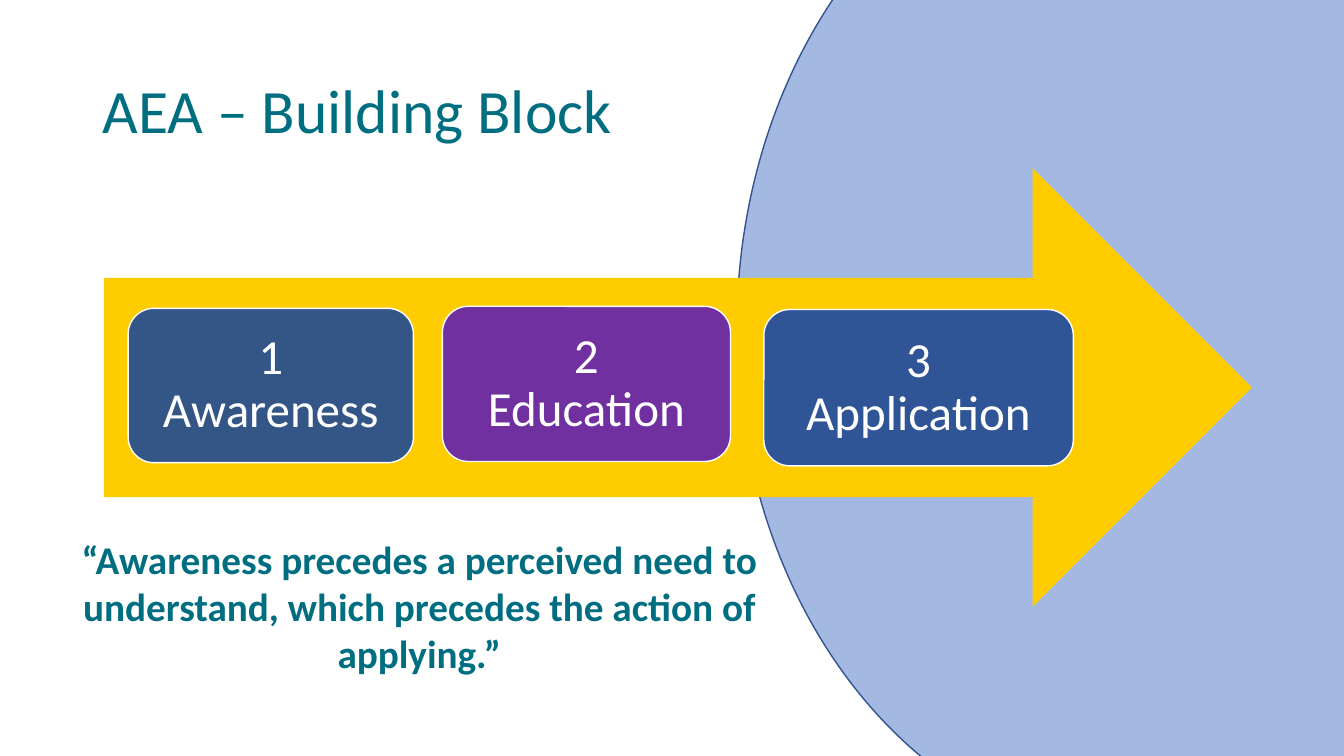
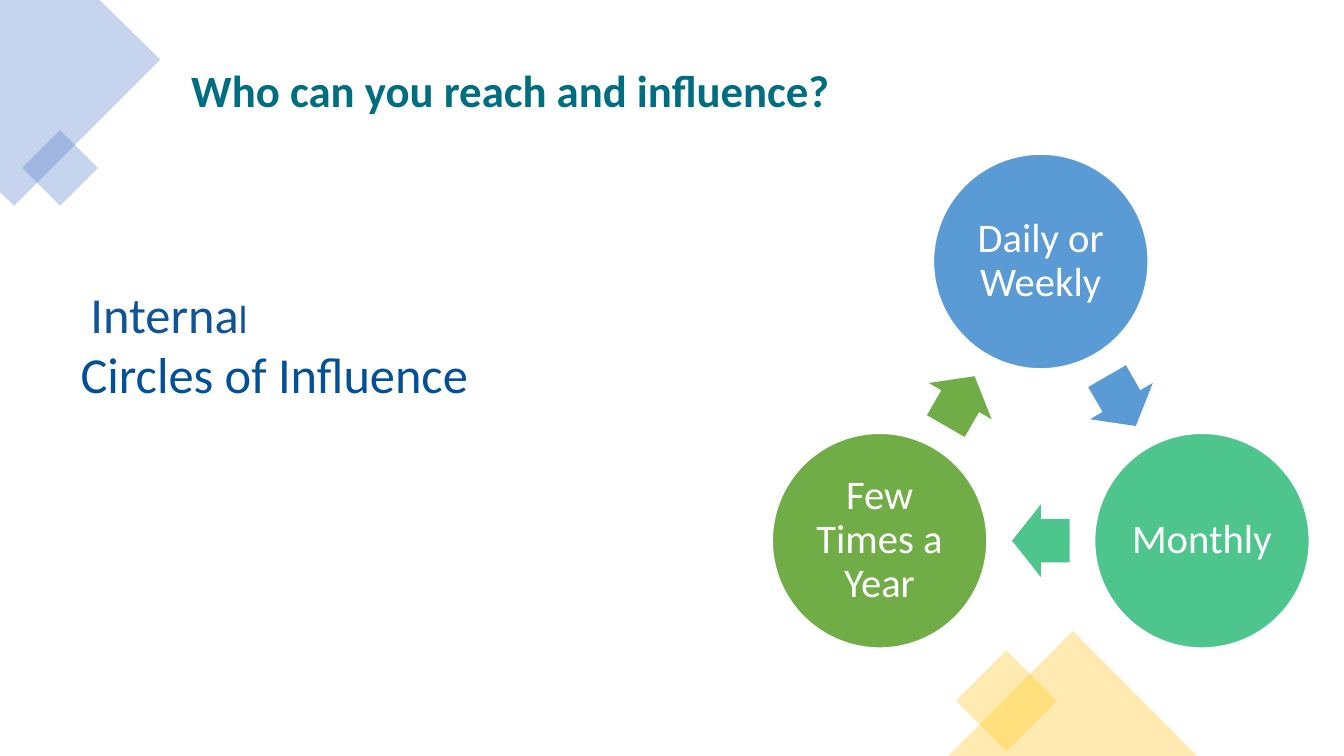
"""Build two slides on awareness building blocks and circles of influence."""
import math

import pptx
import pptx.dml.color
import pptx.enum.shapes
import pptx.enum.text
import pptx.oxml.ns
import pptx.util
from lxml import etree

Cm = pptx.util.Cm
Pt = pptx.util.Pt
SHAPES = pptx.enum.shapes.MSO_SHAPE
ALIGN = pptx.enum.text.PP_ALIGN
ANCHOR = pptx.enum.text.MSO_ANCHOR

FONT = "Calibri"
COLORS = {
    "teal": "006E81",
    "title_blue": "015098",
    "label_blue": "0F5498",
    "accent": "4472C4",
    "accent_edge": "325491",
    "yellow": "FFCC00",
    "gold": "FFC000",
    "slate": "335687",
    "purple": "7030A0",
    "navy": "2F5597",
    "sky": "5B9BD5",
    "mint": "4DC58D",
    "green": "70AD47",
    "white": "FFFFFF",
}


def rgb(name):
    return pptx.dml.color.RGBColor.from_string(COLORS[name])


def paint(shape, fill, line=None, opacity=100):
    shape.shadow.inherit = False
    shape.fill.solid()
    shape.fill.fore_color.rgb = rgb(fill)
    if opacity < 100:
        color = shape.fill._xPr.find(".//" + pptx.oxml.ns.qn("a:srgbClr"))
        alpha = etree.SubElement(color, pptx.oxml.ns.qn("a:alpha"))
        alpha.set("val", str(opacity * 1000))
    if line:
        shape.line.color.rgb = rgb(line)
        shape.line.width = Pt(1)
    else:
        shape.line.fill.background()


def add_shape(slide, kind, box, fill, line=None, opacity=100, rotation=0):
    shape = slide.shapes.add_shape(kind, *map(Cm, box))
    paint(shape, fill, line, opacity)
    shape.rotation = rotation
    return shape


def write(shape, text, size, color, bold=False, align=ALIGN.LEFT,
          anchor=ANCHOR.TOP, spacing=1.0, inset=0.25):
    frame = shape.text_frame
    frame.word_wrap = True
    frame.vertical_anchor = anchor
    frame.margin_left = frame.margin_right = Cm(inset)
    frame.margin_top = frame.margin_bottom = Cm(min(inset, 0.13))
    paragraph = frame.paragraphs[0]
    paragraph.text = text
    paragraph.alignment = align
    paragraph.line_spacing = spacing
    paragraph.font.name = FONT
    paragraph.font.size = Pt(size)
    paragraph.font.bold = bold
    paragraph.font.color.rgb = rgb(color)
    return paragraph


def add_text(slide, box, text, size, color, **style):
    return write(slide.shapes.add_textbox(*map(Cm, box)), text, size, color, **style)


def add_title(slide, box, text, size, color):
    add_text(slide, box, text, size, color, anchor=ANCHOR.MIDDLE, spacing=0.9)


def add_label_shape(slide, kind, box, fill, text, size, inset):
    shape = add_shape(slide, kind, box, fill, "white")
    write(shape, text, size, "white", align=ALIGN.CENTER,
          anchor=ANCHOR.MIDDLE, spacing=0.9, inset=inset)


def add_diamond(slide, left, top, side, fill):
    add_shape(slide, SHAPES.RECTANGLE, (left, top, side, side), fill,
              opacity=30, rotation=45)


def add_corner(slide):
    points = [(Cm(x), Cm(y)) for x, y in
              [(0, 0), (2.51, 0), (4.04, 1.5), (0.36, 5.18), (0, 4.85)]]
    builder = slide.shapes.build_freeform(*points[0], scale=1.0)
    builder.add_line_segments(points[1:], close=True)
    paint(builder.convert_to_shape(), "accent", opacity=30)


def add_cycle(slide, center_x, center_y, radius, diameter, steps):
    turn = 360 / len(steps)
    for index, (text, fill) in enumerate(steps):
        angle = math.radians(index * turn - 90)
        x = center_x + radius * math.cos(angle)
        y = center_y + radius * math.sin(angle)
        box = (x - diameter / 2, y - diameter / 2, diameter, diameter)
        add_label_shape(slide, SHAPES.OVAL, box, fill, text, 29, 0.1)

        middle = angle + math.radians(turn / 2)
        reach = radius * math.cos(math.radians(turn / 2))
        width, height = 1.45, 1.83
        box = (center_x + reach * math.cos(middle) - width / 2,
               center_y + reach * math.sin(middle) - height / 2, width, height)
        arrow = add_shape(slide, SHAPES.RIGHT_ARROW, box, fill,
                          rotation=(index + 0.5) * turn)
        arrow.adjustments[0] = 0.6
        arrow.adjustments[1] = 0.5


def build_blocks_slide(slide):
    add_shape(slide, SHAPES.OVAL, (18.57, -4.75, 21.16, 26.06), "accent",
              "accent_edge", opacity=49)
    add_shape(slide, SHAPES.RIGHT_ARROW, (2.62, 4.24, 28.93, 11.05), "yellow")
    blocks = [
        ("1\vAwareness", "slate", (3.23, 7.77, 7.19, 3.89)),
        ("2\vEducation", "purple", (11.15, 7.72, 7.26, 3.91)),
        ("3\vApplication", "navy", (19.25, 7.8, 7.8, 3.94)),
    ]
    for text, fill, box in blocks:
        add_label_shape(slide, SHAPES.ROUNDED_RECTANGLE, box, fill, text, 35, 0.38)
    add_text(slide, (0.66, 13.36, 19.81, 3.84),
             "“Awareness precedes a perceived need to understand, "
             "which precedes the action of applying.”",
             28, "teal", bold=True, align=ALIGN.CENTER)
    add_title(slide, (2.34, 1.02, 29.21, 3.68), "AEA – Building Block", 44, "teal")


def build_circles_slide(slide):
    add_title(slide, (1.78, 1.78, 13.34, 15.47), "Circles of Influence", 36, "title_blue")
    add_corner(slide)
    add_diamond(slide, 0.84, 3.56, 1.35, "accent")
    add_diamond(slide, 24.46, 16.76, 1.8, "gold")
    add_shape(slide, SHAPES.ISOSCELES_TRIANGLE, (23.9, 15.9, 6.27, 3.15), "gold",
              opacity=30)
    add_text(slide, (4.57, 1.45, 27.25, 1.63), "Who can you reach and influence?",
             32, "teal", bold=True)
    label = add_text(slide, (2.03, 7.01, 12.32, 1.8), "Interna", 36, "label_blue")
    last_letter = label.add_run()
    last_letter.text = "l"
    last_letter.font.size = Pt(28)
    add_cycle(slide, 26.23, 11.28, 4.69, 5.41, [
        ("Daily or Weekly", "sky"),
        ("Monthly", "mint"),
        ("Few Times a Year", "green"),
    ])


def main():
    presentation = pptx.Presentation()
    presentation.slide_width = Cm(33.87)
    presentation.slide_height = Cm(19.05)
    blank = presentation.slide_layouts[6]
    for build in (build_blocks_slide, build_circles_slide):
        build(presentation.slides.add_slide(blank))
    presentation.save("out.pptx")


if __name__ == "__main__":
    main()
